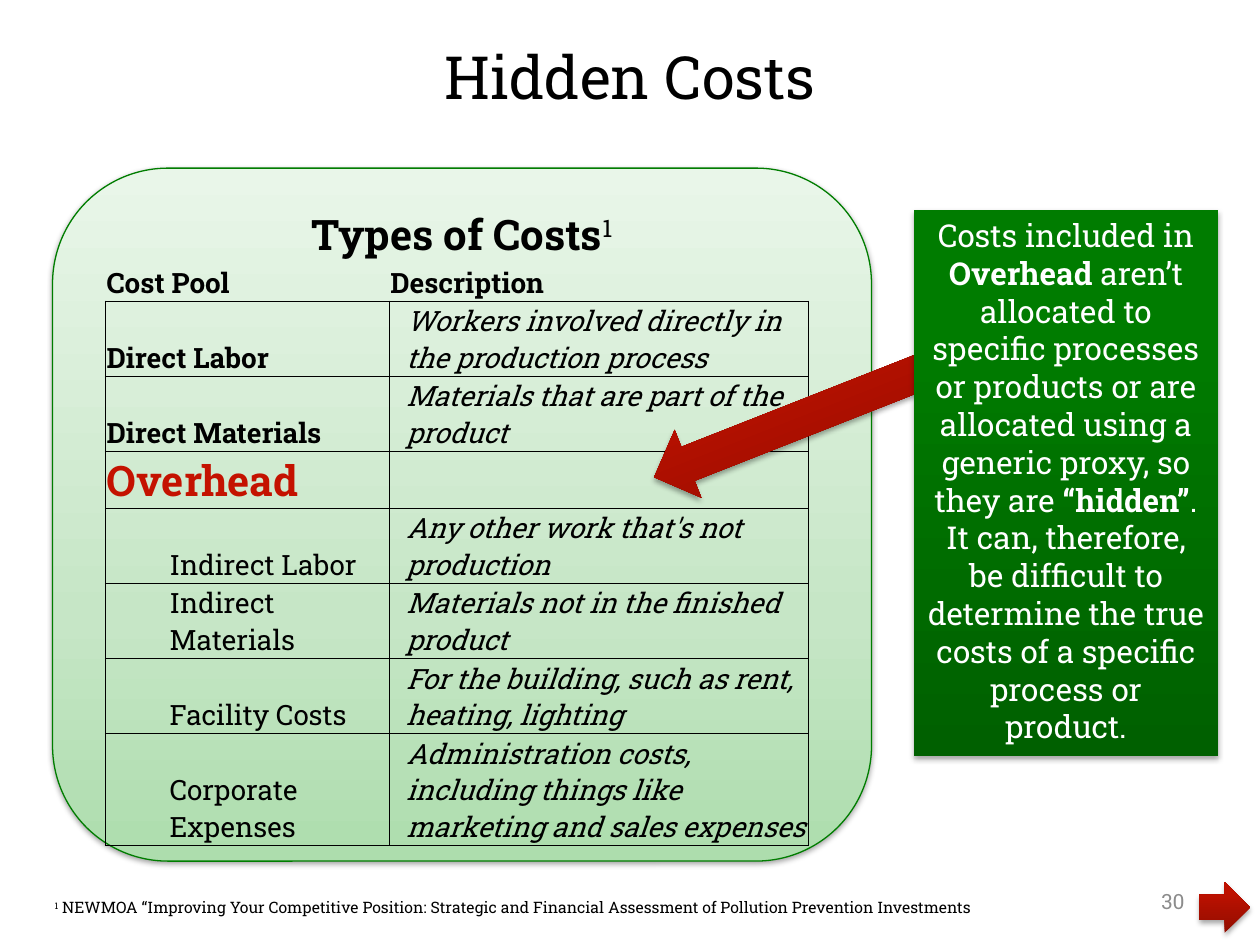
"""Build the Hidden Costs slide with its table of cost types and an overhead callout."""
import lxml.etree as etree
import pptx
import pptx.dml.color
import pptx.enum.shapes
import pptx.enum.text
import pptx.oxml.ns
import pptx.util

Cm = pptx.util.Cm
Pt = pptx.util.Pt
qn = pptx.oxml.ns.qn
RGBColor = pptx.dml.color.RGBColor
SHAPES = pptx.enum.shapes.MSO_SHAPE
ALIGN = pptx.enum.text.PP_ALIGN
ANCHOR = pptx.enum.text.MSO_ANCHOR

FONT = "Roboto Slab"
COLORS = {
    "text": "000000",
    "white": "FFFFFF",
    "number": "8C8C8C",
    "accent": "C41200",
    "panel_line": "007D00",
}
GRADIENTS = {
    "panel": [(0, "ADDDAD"), (35, "C6E6C6"), (100, "E9F6E9")],
    "red": [(0, "920D00"), (80, "BE1100"), (100, "BF1200")],
    "green": [(0, "006000"), (80, "007C00"), (100, "007D00")],
}


def write_runs(paragraph, runs, size, color="text"):
    """Add (text, style) runs, where style may hold b, i or ^ for superscript."""
    for text, style in runs:
        run = paragraph.add_run()
        run.text = text
        run.font.name = FONT
        run.font.size = Pt(size)
        run.font.bold = "b" in style
        run.font.italic = "i" in style
        run.font.color.rgb = RGBColor.from_string(COLORS[color])
        if "^" in style:
            run.font._element.set("baseline", "30000")


def add_gradient_shape(kind, box, gradient, line=None, opacity=35, distance=1.8):
    """Add a shape with an upward gradient and a soft shadow below it."""
    shape = slide.shapes.add_shape(kind, *map(Cm, box))
    shape.fill.gradient()
    shape.fill.gradient_angle = 90
    stops = shape._element.spPr.find(".//" + qn("a:gsLst"))
    for stop in list(stops):
        stops.remove(stop)
    for position, color in GRADIENTS[gradient]:
        stop = etree.SubElement(stops, qn("a:gs"), pos=str(position * 1000))
        etree.SubElement(stop, qn("a:srgbClr"), val=color)
    if line:
        shape.line.color.rgb = RGBColor.from_string(COLORS[line])
        shape.line.width = Pt(0.75)
    else:
        shape.line.fill.background()
    shape.shadow.inherit = False
    effects = shape._element.spPr.find(qn("a:effectLst"))
    shadow = etree.SubElement(
        effects, qn("a:outerShdw"), blurRad=str(Pt(3.1)), dist=str(Pt(distance)),
        dir="5400000", rotWithShape="0")
    shade = etree.SubElement(shadow, qn("a:srgbClr"), val="000000")
    etree.SubElement(shade, qn("a:alpha"), val=str(opacity * 1000))
    shape.text_frame.word_wrap = True
    return shape


presentation = pptx.Presentation()
presentation.slide_width = Cm(25.4)
presentation.slide_height = Cm(19.05)
slide = presentation.slides.add_slide(presentation.slide_layouts[5])

title = slide.shapes.title
title.left, title.top, title.width, title.height = map(Cm, (1.27, 0.43, 22.86, 2.21))
title.text_frame.vertical_anchor = ANCHOR.MIDDLE
paragraph = title.text_frame.paragraphs[0]
paragraph.alignment = ALIGN.CENTER
write_runs(paragraph, [("Hidden Costs", "")], 34)

panel = add_gradient_shape(
    SHAPES.ROUNDED_RECTANGLE, (1.06, 3.39, 16.51, 13.97), "panel", "panel_line", 38, 1.6)
panel.text_frame.vertical_anchor = ANCHOR.TOP
paragraph = panel.text_frame.paragraphs[0]
paragraph.alignment = ALIGN.CENTER
write_runs(paragraph, [("Types of Costs", "b"), ("1", "^")], 24)

cost_rows = [
    ("Cost Pool", "Description", 1.09),
    ("Direct Labor", "Workers involved directly in the production process", 1.42),
    ("Direct Materials", "Materials that are part of the product", 1.42),
    ("Overhead", "", 1.09),
    ("Indirect Labor", "Any other work that's not production", 1.42),
    ("Indirect Materials", "Materials not in the finished product", 1.42),
    ("Facility Costs", "For the building, such as rent, heating, lighting", 1.42),
    ("Corporate Expenses",
     "Administration costs, including things like marketing and sales expenses", 2.16),
]
overhead_row = 3
table = slide.shapes.add_table(
    len(cost_rows), 2, Cm(2.12), Cm(4.98), Cm(14.18), Cm(11.44)).table
table.first_row = False
table.horz_banding = False
table._tbl.tblPr.find(qn("a:tableStyleId")).text = "{2D5ABB26-0587-4C30-8999-92F81FD0307C}"
table.columns[0].width = Cm(5.72)
table.columns[1].width = Cm(8.46)

for row, (pool, description, height) in enumerate(cost_rows):
    table.rows[row].height = Cm(height)
    for column, text in enumerate((pool, description)):
        cell = table.cell(row, column)
        cell.fill.background()
        sides = ["a:lnB"] if row == 0 else ["a:lnL", "a:lnR", "a:lnT", "a:lnB"]
        for index, side in enumerate(sides):
            border = etree.Element(qn(side), w=str(Pt(0.5)))
            fill = etree.SubElement(border, qn("a:solidFill"))
            etree.SubElement(fill, qn("a:srgbClr"), val=COLORS["text"])
            cell._tc.tcPr.insert(index, border)
        if not text:
            continue
        cell.vertical_anchor = ANCHOR.BOTTOM
        cell.margin_left = cell.margin_right = cell.margin_top = Cm(0.03)
        cell.margin_bottom = 0
        paragraph = cell.text_frame.paragraphs[0]
        indent = 0
        if column == 1 and row > 0:
            indent = 0.32
        elif column == 0 and row > overhead_row:
            indent = 1.27
            paragraph.level = 1
        properties = paragraph._p.get_or_add_pPr()
        properties.set("marL", str(Cm(indent)))
        properties.set("indent", "0")
        if row == 0 or (column == 0 and row <= overhead_row):
            style = "b"
        else:
            style = "i" if column == 1 else ""
        highlighted = row == overhead_row
        write_runs(paragraph, [(text, style)], 24 if highlighted else 16,
                   "accent" if highlighted else "text")

footnote = slide.shapes.add_textbox(Cm(0.85), Cm(17.98), Cm(23.92), Cm(1.02))
footnote.text_frame.word_wrap = True
write_runs(footnote.text_frame.paragraphs[0], [
    ("1", "^"),
    (" NEWMOA “Improving Your Competitive Position: Strategic and Financial "
     "Assessment of Pollution Prevention Investments", ""),
], 9)

page_number = slide.shapes.add_textbox(Cm(18.21), Cm(17.65), Cm(5.92), Cm(1.02))
page_number.text_frame.word_wrap = True
page_number.text_frame.vertical_anchor = ANCHOR.MIDDLE
paragraph = page_number.text_frame.paragraphs[0]
paragraph.alignment = ALIGN.RIGHT
write_runs(paragraph, [("30", "")], 12, "number")

overhead_arrow = add_gradient_shape(SHAPES.LEFT_ARROW, (12.98, 7.8, 5.92, 1.47), "red")
overhead_arrow.rotation = 338.5
add_gradient_shape(SHAPES.RIGHT_ARROW, (24.18, 17.78, 1.02, 1.02), "red")

callout = add_gradient_shape(SHAPES.RECTANGLE, (18.42, 4.23, 6.14, 11.02), "green")
callout.text_frame.vertical_anchor = ANCHOR.TOP
paragraph = callout.text_frame.paragraphs[0]
paragraph.alignment = ALIGN.CENTER
paragraph.line_spacing = Pt(21.6)
write_runs(paragraph, [
    ("Costs included in ", ""),
    ("Overhead", "b"),
    (" aren’t allocated to specific processes or products or are allocated "
     "using a generic proxy, so they are ", ""),
    ("“hidden”", "b"),
    (". It can, therefore, be difficult to determine the true costs of a "
     "specific process or product.", ""),
], 18, "white")

presentation.save("out.pptx")
